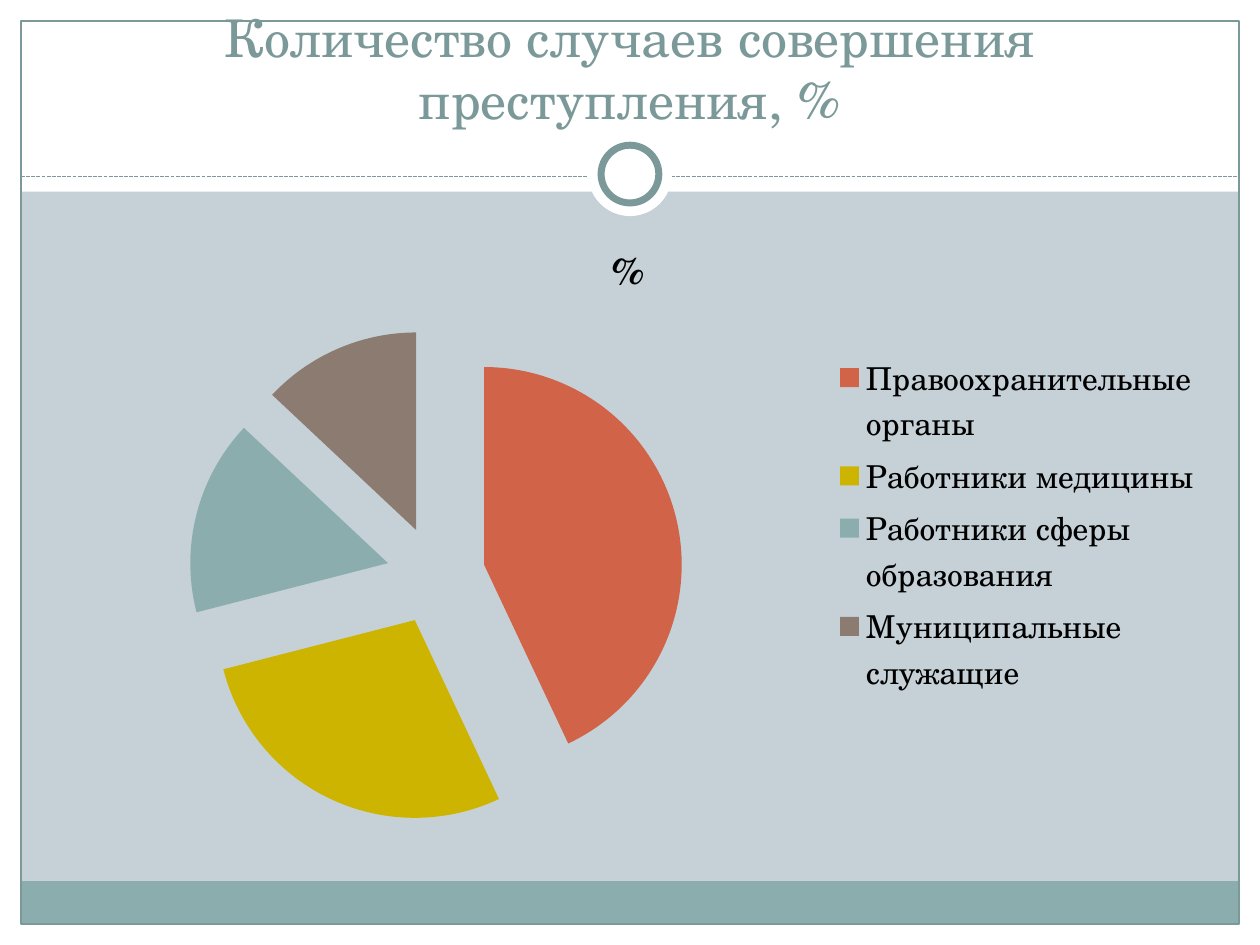
from dataclasses import dataclass
from typing import Optional

import lxml.etree
import pptx
import pptx.chart.data
import pptx.dml.color
import pptx.enum.chart
import pptx.enum.dml
import pptx.enum.shapes
import pptx.enum.text
import pptx.oxml.ns
import pptx.util

Pt = pptx.util.Pt
RGBColor = pptx.dml.color.RGBColor
Preset = pptx.enum.shapes.MSO_SHAPE
qn = pptx.oxml.ns.qn

FONT = "TeX Gyre Schola"
BACKGROUND = RGBColor(0xC5, 0xD1, 0xD7)
WHITE = RGBColor(0xFF, 0xFF, 0xFF)
BLACK = RGBColor(0x00, 0x00, 0x00)
SAGE = RGBColor(0x7C, 0x99, 0x9A)
TEAL = RGBColor(0x8C, 0xAD, 0xAE)
RED = RGBColor(0xD1, 0x63, 0x49)
YELLOW = RGBColor(0xCC, 0xB4, 0x00)
BROWN = RGBColor(0x8C, 0x7B, 0x70)

WIDTH, HEIGHT = 720, 540
MARGIN = 12
RULE_Y = 100.8


@dataclass
class Panel:
    left: float
    top: float
    width: float
    height: float
    fill: Optional[RGBColor] = None
    line_width: float = 0
    preset: Preset = Preset.RECTANGLE


@dataclass
class Slice:
    label: str
    percent: int
    color: RGBColor


def ring(diameter: float, line_width: float = 0) -> Panel:
    """A white circle centred on the dashed rule's medallion."""
    return Panel((WIDTH - diameter) / 2, 99.5 - diameter / 2, diameter, diameter,
                 WHITE, line_width, Preset.OVAL)


FRAME = [
    Panel(0, HEIGHT - MARGIN, WIDTH, MARGIN, WHITE),
    Panel(0, 0, WIDTH, 109.5, WHITE),
    Panel(0, 0, MARGIN, HEIGHT, WHITE),
    Panel(WIDTH - MARGIN, 0, MARGIN, HEIGHT, WHITE),
    Panel(MARGIN, 503.5, WIDTH - 2 * MARGIN, 24.5, TEAL),
    Panel(MARGIN, MARGIN, WIDTH - 2 * MARGIN, HEIGHT - 2 * MARGIN, line_width=0.75),
]
MEDALLION = [ring(48), ring(33, 4)]

SLICES = [
    Slice("Правоохранительные органы", 43, RED),
    Slice("Работники медицины", 28, YELLOW),
    Slice("Работники сферы образования", 16, TEAL),
    Slice("Муниципальные служащие", 13, BROWN),
]


def draw_panel(slide: pptx.slide.Slide, panel: Panel) -> None:
    shape = slide.shapes.add_shape(panel.preset, Pt(panel.left), Pt(panel.top),
                                   Pt(panel.width), Pt(panel.height))
    shape.shadow.inherit = False
    if panel.fill is None:
        shape.fill.background()
    else:
        shape.fill.solid()
        shape.fill.fore_color.rgb = panel.fill
    if panel.line_width:
        shape.line.color.rgb = SAGE
        shape.line.width = Pt(panel.line_width)
    else:
        shape.line.fill.background()


def draw_rule(slide: pptx.slide.Slide) -> None:
    rule = slide.shapes.add_connector(
        pptx.enum.shapes.MSO_CONNECTOR.STRAIGHT,
        Pt(MARGIN), Pt(RULE_Y), Pt(WIDTH - MARGIN), Pt(RULE_Y))
    rule.line.color.rgb = SAGE
    rule.line.width = Pt(0.75)
    rule.line.dash_style = pptx.enum.dml.MSO_LINE.SQUARE_DOT
    lxml.etree.SubElement(rule._element.spPr, qn("a:effectLst"))


def style_font(font: pptx.text.text.Font, size: float, color: RGBColor,
               bold: bool = False) -> None:
    font.name = FONT
    font.size = Pt(size)
    font.color.rgb = color
    font.bold = bold


def draw_title(slide: pptx.slide.Slide, text: str) -> None:
    heading = slide.shapes.title
    heading.left, heading.top = Pt(24), Pt(18)
    heading.width, heading.height = Pt(672), Pt(60)
    # Bring the heading in front of the white panels
    slide.shapes._spTree.append(heading._element)
    frame = heading.text_frame
    frame.word_wrap = True
    frame.auto_size = pptx.enum.text.MSO_AUTO_SIZE.NONE
    frame.vertical_anchor = pptx.enum.text.MSO_ANCHOR.BOTTOM
    paragraph = frame.paragraphs[0]
    paragraph.alignment = pptx.enum.text.PP_ALIGN.CENTER
    run = paragraph.add_run()
    run.text = text
    style_font(run.font, 29.7, SAGE)


def draw_pie(slide: pptx.slide.Slide, slices: list[Slice]) -> None:
    shares = pptx.chart.data.CategoryChartData()
    shares.categories = [part.label for part in slices]
    shares.add_series("%", [part.percent for part in slices])
    pie = slide.shapes.add_chart(pptx.enum.chart.XL_CHART_TYPE.PIE, Pt(24), Pt(120),
                                 Pt(670), Pt(360), shares).chart
    style_font(pie.font, 18, BLACK)

    pie.has_title = True
    run = pie.chart_title.text_frame.paragraphs[0].add_run()
    run.text = "%"
    style_font(run.font, 21.6, BLACK, bold=True)

    pie.has_legend = True
    pie.legend.position = pptx.enum.chart.XL_LEGEND_POSITION.RIGHT
    pie.legend.include_in_layout = False
    style_font(pie.legend.font, 18, BLACK)

    plot = pie.plots[0]
    plot.vary_by_categories = True
    series = plot.series[0]
    for index, part in enumerate(slices):
        fill = series.points[index].format.fill
        fill.solid()
        fill.fore_color.rgb = part.color

    # Pull all slices apart
    explosion = lxml.etree.Element(qn("c:explosion"), val="25")
    series._element.find(qn("c:tx")).addnext(explosion)


def main() -> None:
    deck = pptx.Presentation()
    deck.slide_width, deck.slide_height = Pt(WIDTH), Pt(HEIGHT)
    slide = deck.slides.add_slide(deck.slide_layouts[5])
    slide.background.fill.solid()
    slide.background.fill.fore_color.rgb = BACKGROUND

    # Frame, dashed rule and medallion
    for panel in FRAME:
        draw_panel(slide, panel)
    draw_rule(slide)
    for panel in MEDALLION:
        draw_panel(slide, panel)

    # Content
    draw_title(slide, "Количество случаев совершения преступления, %")
    draw_pie(slide, SLICES)
    deck.save("out.pptx")


if __name__ == "__main__":
    main()
